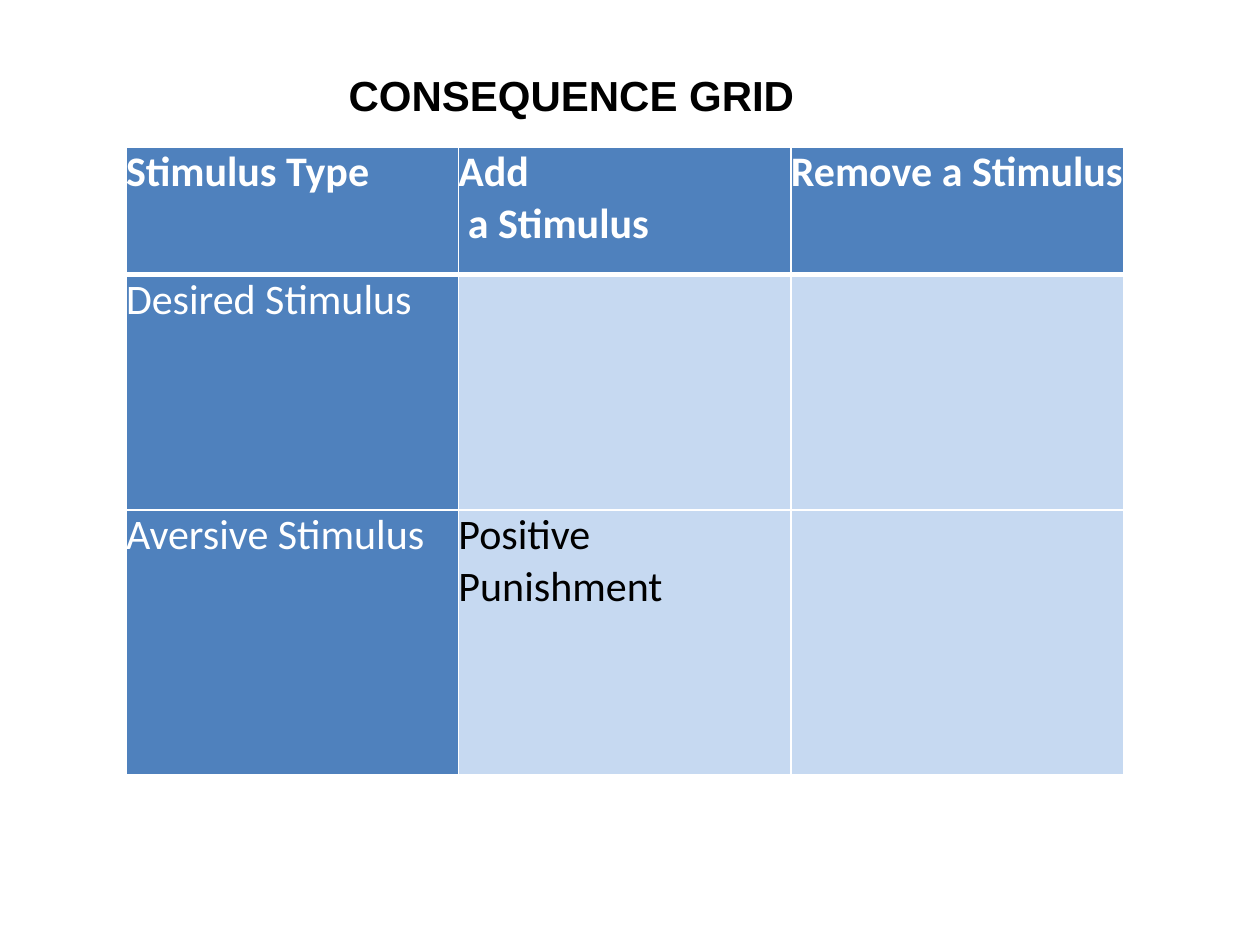
from lxml import etree
from pptx import Presentation
from pptx.dml.color import RGBColor
from pptx.enum import text
from pptx.oxml import ns
from pptx.util import Pt


def paint(target, color):
    if hasattr(target, "solid"):
        target.solid()
        target = target.fore_color
    target.rgb = RGBColor.from_string(color)


def add_border(cell, side, width, color):
    props = cell._tc.get_or_add_tcPr()
    line = etree.Element(ns.qn(f"a:ln{side}"), w=str(Pt(width)))
    fill = etree.SubElement(line, ns.qn("a:solidFill"))
    etree.SubElement(fill, ns.qn("a:srgbClr"), val=color)
    props.insert("LRTB".index(side), line)


WHITE, BLACK, BLUE, PALE = "FFFFFF", "000000", "4F81BD", "C6D9F1"

deck = Presentation()
deck.slide_width, deck.slide_height = Pt(720), Pt(540)
slide = deck.slides.add_slide(deck.slide_layouts[5])

heading = slide.shapes.title
heading.left, heading.top, heading.width, heading.height = Pt(192), Pt(36), Pt(272), Pt(36.5)
heading.text_frame.text = "CONSEQUENCE GRID"
heading.text_frame.auto_size = text.MSO_AUTO_SIZE.NONE
heading.text_frame.vertical_anchor = text.MSO_ANCHOR.TOP
heading_line = heading.text_frame.paragraphs[0]
heading_line.alignment = text.PP_ALIGN.LEFT
heading_font = heading_line.runs[0].font
heading_font.name, heading_font.size, heading_font.bold = "Arial", Pt(24), True
paint(heading_font.color, BLACK)

consequences = [
    ["Stimulus Type", "Add\n a Stimulus", "Remove a Stimulus"],
    ["Desired Stimulus", "", ""],
    ["Aversive Stimulus", "Positive Punishment", ""],
]
row_heights = [72.75, 134.75, 151]
grid = slide.shapes.add_table(3, 3, Pt(72), Pt(84), Pt(570), Pt(sum(row_heights))).table

for r, (height, entries) in enumerate(zip(row_heights, consequences)):
    grid.rows[r].height = Pt(height)
    for c, entry in enumerate(entries):
        cell = grid.cell(r, c)
        is_label = r == 0 or c == 0
        cell.margin_left = cell.margin_right = cell.margin_top = cell.margin_bottom = 0
        paint(cell.fill, BLUE if is_label else PALE)
        rule_widths = {"L": 1, "R": 1, "T": 3 if r == 1 else 1, "B": 3 if r == 0 else 1}
        for side, width in rule_widths.items():
            add_border(cell, side, width, WHITE)
        cell.text_frame.text = entry
        for paragraph in cell.text_frame.paragraphs:
            for run in paragraph.runs:
                run.font.name, run.font.size, run.font.bold = "Calibri", Pt(24), r == 0
                paint(run.font.color, WHITE if is_label else BLACK)

deck.save("out.pptx")
